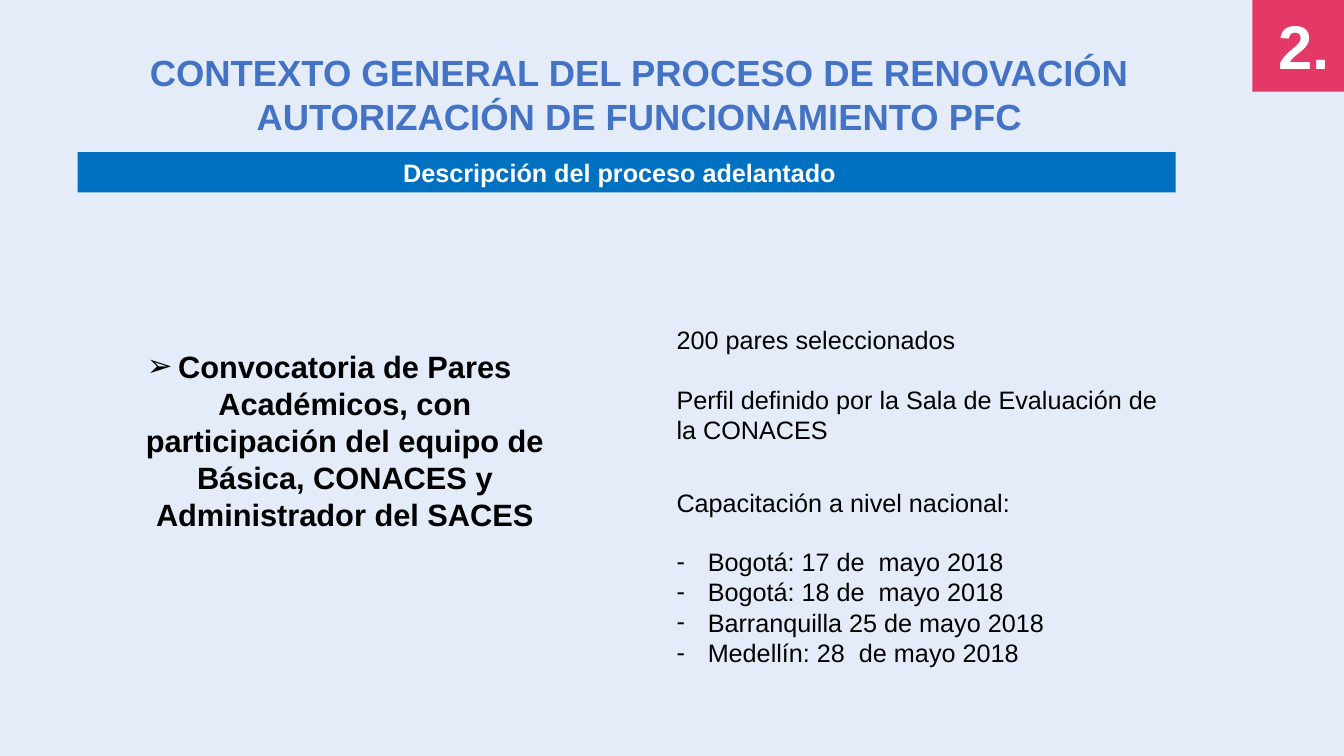
from dataclasses import dataclass

from lxml import etree
from pptx import Presentation
from pptx.dml.color import RGBColor
from pptx.enum.shapes import MSO_SHAPE
from pptx.enum.text import MSO_ANCHOR, MSO_AUTO_SIZE, PP_ALIGN
from pptx.oxml.ns import qn
from pptx.util import Inches, Pt

RECTANGLE = MSO_SHAPE.RECTANGLE
TOP, MIDDLE = MSO_ANCHOR.TOP, MSO_ANCHOR.MIDDLE
LEFT, CENTER, JUSTIFY = PP_ALIGN.LEFT, PP_ALIGN.CENTER, PP_ALIGN.JUSTIFY
NO_AUTOFIT = MSO_AUTO_SIZE.NONE

HEADING = "CONTEXTO GENERAL DEL PROCESO DE RENOVACIÓN AUTORIZACIÓN DE FUNCIONAMIENTO PFC"
SECTION_NUMBER = "2."
SUBHEADING = "Descripción del proceso adelantado"
CALL = [("Convocatoria de Pares Académicos, con participación del equipo "
         "de Básica, CONACES y Administrador del SACES", "➢")]
PROFILE = [
    ("200 pares seleccionados", None),
    ("Perfil definido por la Sala de Evaluación de la CONACES", None),
]
TRAINING = [
    ("Capacitación a nivel nacional:", None),
    ("Bogotá: 17 de  mayo 2018", "-"),
    ("Bogotá: 18 de  mayo 2018", "-"),
    ("Barranquilla 25 de mayo 2018", "-"),
    ("Medellín: 28  de mayo 2018", "-"),
]


@dataclass(frozen=True)
class Theme:
    font: str = "Arial"
    background: str = "E3ECF8"
    accent: str = "E43866"
    banner: str = "0070C0"
    heading: str = "4472C4"
    text: str = "000000"
    inverse: str = "FFFFFF"
    number_size: int = 44
    heading_size: int = 26
    call_size: int = 22
    body_size: int = 18
    gap: int = 21


THEME = Theme()
LEFT_X, RIGHT_X = 0.77, 6.61
BANNER_WIDTH, COLUMN_WIDTH = 10.89, 4.99
BADGE_SIDE = 0.91
HANGING = 0.31


def place(shape, left, top, width, height):
    shape.left, shape.top = Inches(left), Inches(top)
    shape.width, shape.height = Inches(width), Inches(height)


def set_bullet(paragraph, mark):
    properties = paragraph._p.get_or_add_pPr()
    indent = Inches(HANGING) if mark else 0
    properties.set("marL", str(indent))
    properties.set("indent", str(-indent))
    if mark:
        font = etree.SubElement(properties, qn("a:buFont"))
        font.set("typeface", THEME.font)
        etree.SubElement(properties, qn("a:buChar")).set("char", mark)
    else:
        etree.SubElement(properties, qn("a:buNone"))


def write(shape, items, size, color, align=LEFT, bold=False, anchor=TOP, gap_before=None):
    frame = shape.text_frame
    frame.word_wrap = True
    frame.auto_size = NO_AUTOFIT
    frame.vertical_anchor = anchor
    frame.text = "\n".join(line for line, _ in items)
    for index, (paragraph, (_, mark)) in enumerate(zip(frame.paragraphs, items)):
        paragraph.alignment = align
        paragraph.space_before = Pt(THEME.gap if index == gap_before else 0)
        set_bullet(paragraph, mark)
        paragraph.font.name = THEME.font
        paragraph.font.size = Pt(size)
        paragraph.font.bold = bold
        paragraph.font.color.rgb = RGBColor.from_string(color)


def add_block(slide, left, top, width, height, color):
    block = slide.shapes.add_shape(
        RECTANGLE, Inches(left), Inches(top), Inches(width), Inches(height))
    block.shadow.inherit = False
    block.fill.solid()
    block.fill.fore_color.rgb = RGBColor.from_string(color)
    block.line.fill.background()
    return block


def main():
    deck = Presentation()
    deck.slide_width, deck.slide_height = Inches(13.33), Inches(7.5)
    slide = deck.slides.add_slide(deck.slide_layouts.get_by_name("Comparison"))
    slide.background.fill.solid()
    slide.background.fill.fore_color.rgb = RGBColor.from_string(THEME.background)
    title, call, profile, spare, training = slide.placeholders
    spare.element.getparent().remove(spare.element)

    add_block(slide, 13.33 - BADGE_SIDE, 0, BADGE_SIDE, BADGE_SIDE, THEME.accent)
    number = slide.shapes.add_textbox(Inches(12.58), Inches(0.03), Inches(0.76), Inches(0.84))
    write(number, [(SECTION_NUMBER, None)], THEME.number_size, THEME.inverse, bold=True)

    banner = add_block(slide, LEFT_X, 1.51, BANNER_WIDTH, 0.4, THEME.banner)
    write(banner, [(SUBHEADING, None)], THEME.body_size, THEME.inverse, CENTER, True, MIDDLE)
    banner.text_frame.margin_right = Inches(0.24)

    place(title, 0.9, 0.45, BANNER_WIDTH, 0.98)
    write(title, [(HEADING, None)], THEME.heading_size, THEME.heading, CENTER, True)
    place(call, LEFT_X, 3.4, COLUMN_WIDTH, 2.32)
    write(call, CALL, THEME.call_size, THEME.text, CENTER, True)
    place(profile, RIGHT_X, 3.17, COLUMN_WIDTH, 1.31)
    write(profile, PROFILE, THEME.body_size, THEME.text, gap_before=1)
    place(training, RIGHT_X, 4.78, COLUMN_WIDTH, 2.22)
    write(training, TRAINING, THEME.body_size, THEME.text, JUSTIFY, gap_before=1)

    deck.save("out.pptx")


if __name__ == "__main__":
    main()
